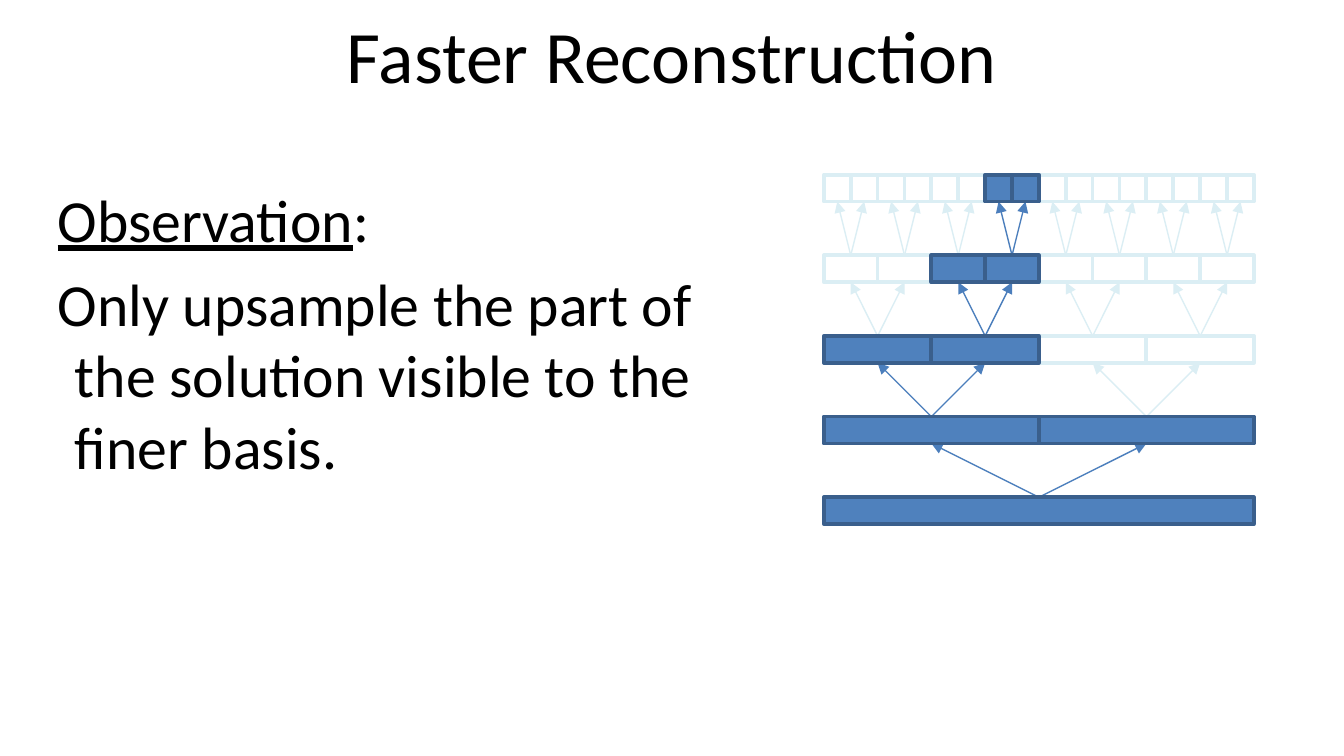
from lxml import etree
from pptx import Presentation
from pptx import util as u
from pptx.dml.color import RGBColor
from pptx.enum import shapes, text
from pptx.oxml.ns import qn

Inches, Pt = u.Inches, u.Pt
COLORS = {
    "text": "000000",
    "lit_fill": "4F81BD", "lit_edge": "3A5F8C", "lit_arrow": "4B7EBC",
    "dim_fill": "FFFFFF", "dim_edge": "DBEEF4", "dim_arrow": "DBEEF4",
}


def color(name):
    return RGBColor.from_string(COLORS[name])


def add_span(para, words, size, underline=False):
    span = para.add_run()
    span.text = words
    span.font.name = "Calibri"
    span.font.size = Pt(size)
    span.font.underline = underline
    span.font.color.rgb = color("text")


# A 16:9 page
deck = Presentation()
deck.slide_width = Inches(10)
deck.slide_height = Inches(10) * 9 // 16
page = deck.slides.add_slide(deck.slide_layouts[5])

# Title
title = page.shapes.title
title.left, title.top = Inches(0.5), Inches(0)
title.width, title.height = Inches(9), Inches(0.81)
title.text_frame.vertical_anchor = text.MSO_ANCHOR.MIDDLE
para = title.text_frame.paragraphs[0]
para.alignment = text.PP_ALIGN.CENTER
add_span(para, "Faster Reconstruction", 39.6)

# Observation
body = page.shapes.add_textbox(Inches(0.33), Inches(1.31), Inches(5.8), Inches(4.31))
frame = body.text_frame
frame.word_wrap = True
para = frame.paragraphs[0]
add_span(para, "Observation", 32, underline=True)
add_span(para, ":", 32)

para = frame.add_paragraph()
para.space_before = Pt(6.4)
indent = para._p.get_or_add_pPr()
indent.set("marL", str(Inches(0.13)))
indent.set("indent", str(-Inches(0.13)))
add_span(para, "Only upsample the part of", 32)
para.add_line_break()
add_span(para, "the solution visible to the finer basis.", 32)

# Pyramid cells: each level up halves the cell width
LEFT, BOTTOM, WIDTH, HEIGHT, STEP = 6.13, 3.7, 3.2, 0.2, 0.6
visible = [{0}, {0, 1}, {0, 1}, {2, 3}, {6, 7}]
levels = []
for level, lit in enumerate(visible):
    count = 2 ** level
    cell = WIDTH / count
    row = {}
    # Lit cells come last so their edges lie on top
    for i in sorted(range(count), key=lambda i: i in lit):
        state = "lit" if i in lit else "dim"
        box = page.shapes.add_shape(
            shapes.MSO_SHAPE.RECTANGLE, Inches(LEFT + i * cell),
            Inches(BOTTOM - level * STEP), Inches(cell), Inches(HEIGHT))
        box.shadow.inherit = False
        box.fill.solid()
        box.fill.fore_color.rgb = color(state + "_fill")
        box.line.color.rgb = color(state + "_edge")
        box.line.width = Pt(2)
        row[i] = box
    levels.append(row)

# Arrows from each cell to its two finer cells, behind the cells
root = levels[0][0]
for level in range(1, len(levels)):
    for i, child in sorted(levels[level].items()):
        arrow = page.shapes.add_connector(shapes.MSO_CONNECTOR.STRAIGHT, 0, 0, 0, 0)
        arrow.begin_connect(levels[level - 1][i // 2], 0)
        arrow.end_connect(child, 2)
        state = "lit" if i in visible[level] else "dim"
        arrow.line.color.rgb = color(state + "_arrow")
        arrow.line.width = Pt(0.75)
        etree.SubElement(arrow.line._get_or_add_ln(), qn("a:tailEnd"), type="triangle")
        etree.SubElement(arrow.element.spPr, qn("a:effectLst"))
        root.element.addprevious(arrow.element)

deck.save("out.pptx")
